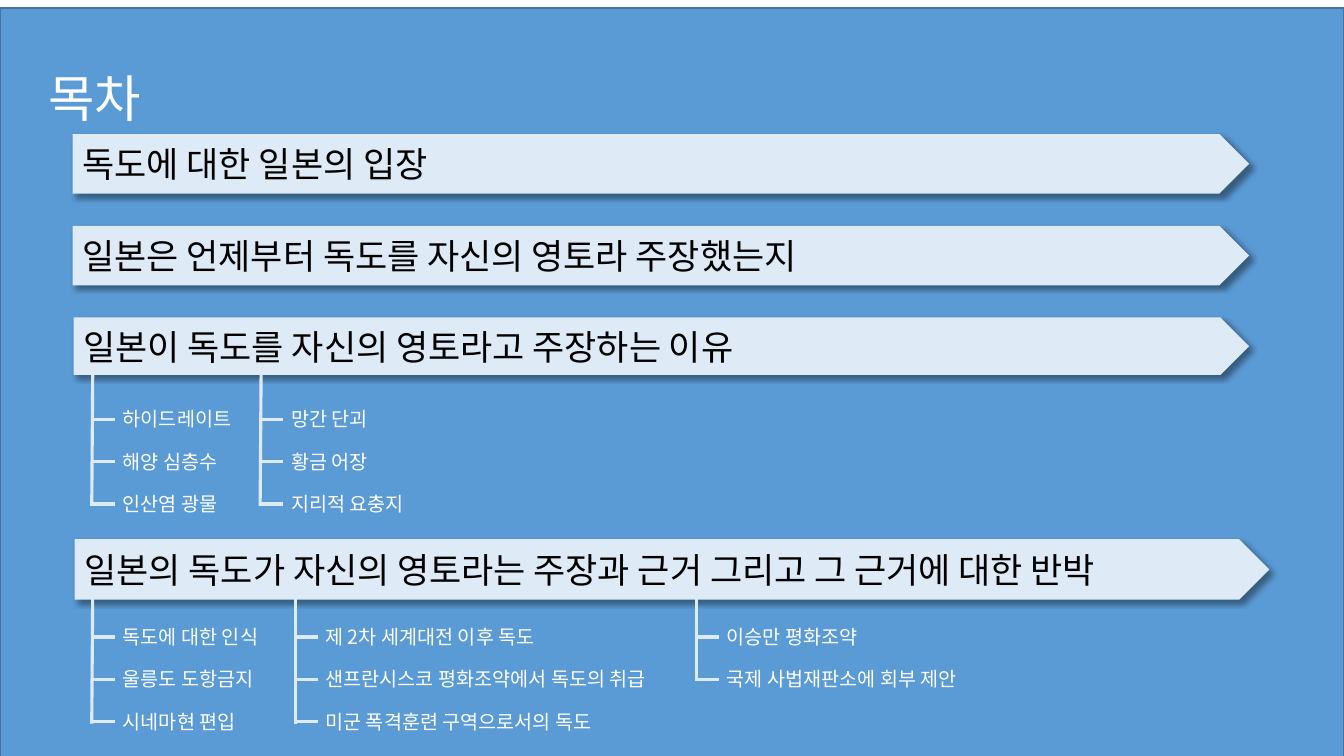
from lxml.etree import SubElement
from pptx import Presentation
from pptx.dml.color import RGBColor
from pptx.enum.shapes import MSO_CONNECTOR, MSO_SHAPE
from pptx.enum.text import MSO_ANCHOR, MSO_AUTO_SIZE, PP_ALIGN
from pptx.oxml import parse_xml
from pptx.oxml.ns import nsdecls, qn
from pptx.util import Inches, Pt

BANNERS = [
    (0.72, 1.33, 11.67, 0.59, "독도에 대한 일본의 입장"),
    (0.72, 2.24, 11.67, 0.59, "일본은 언제부터 독도를 자신의 영토라 주장했는지"),
    (0.73, 3.15, 11.66, 0.57, "일본이 독도를 자신의 영토라고 주장하는 이유"),
    (0.74, 5.35, 11.85, 0.6,
     "일본의 독도가 자신의 영토라는 주장과 근거 그리고 그 근거에 대한 반박"),
]

# Stem left, stem top, lean of the stem, label width, labels
TREES = [
    (0.92, 3.69, 0.01, 1.71, ["하이드레이트", "해양 심층수", "인산염 광물"]),
    (2.59, 3.69, 0.01, 1.71, ["망간 단괴", "황금 어장", "지리적 요충지"]),
    (0.92, 5.85, 0.01, 1.71, ["독도에 대한 인식", "울릉도 도항금지", "시네마현 편입"]),
    (2.93, 5.85, 0, 3.77, ["제 2차 세계대전 이후 독도",
                           "샌프란시스코 평화조약에서 독도의 취급",
                           "미군 폭격훈련 구역으로서의 독도"]),
    (6.91, 5.85, 0, 3.18, ["이승만 평화조약", "국제 사법재판소에 회부 제안"]),
]

SHADOW = f"""<a:effectLst {nsdecls("a")}>
  <a:outerShdw blurRad="{Pt(4)}" dist="{Pt(3)}" dir="2700000" algn="tl" rotWithShape="0">
    <a:srgbClr val="000000"><a:alpha val="40000"/></a:srgbClr>
  </a:outerShdw>
</a:effectLst>"""


def color(value):
    return RGBColor.from_string(value)


class Outline:
    font = "Noto Sans CJK KR"
    blue, edge, pale = "5B9BD5", "43739E", "DEEBF7"
    white, black = "FFFFFF", "000000"
    first_twig, twig_step, twig_length = 0.47, 0.42, 0.22

    def __init__(self, page):
        self.page = page

    def set_text(self, shape, text, size, ink):
        para = shape.text_frame.paragraphs[0]
        para.text = text
        para.alignment = PP_ALIGN.LEFT
        for span in para.runs:
            span.font.size = Pt(size)
            span.font.color.rgb = color(ink)
            span.font.name = self.font
            SubElement(span.font._element, qn("a:ea"), typeface=self.font)

    def shape(self, kind, left, top, width, height, fill):
        shape = self.page.shapes.add_shape(
            kind, Inches(left), Inches(top), Inches(width), Inches(height))
        shape.shadow.inherit = False
        shape.fill.solid()
        shape.fill.fore_color.rgb = color(fill)
        return shape

    def backdrop(self):
        panel = self.shape(MSO_SHAPE.RECTANGLE, 0, 0.08, 13.33, 7.59, self.blue)
        panel.line.color.rgb = color(self.edge)
        panel.line.width = Pt(1)

    def banner(self, left, top, width, height, text):
        banner = self.shape(MSO_SHAPE.PENTAGON, left, top, width, height, self.pale)
        banner.line.fill.background()
        properties = banner._element.spPr
        properties.replace(properties.find(qn("a:effectLst")), parse_xml(SHADOW))
        banner.text_frame.vertical_anchor = MSO_ANCHOR.MIDDLE
        banner.text_frame.word_wrap = True
        self.set_text(banner, text, 25, self.black)

    def label(self, left, top, width, height, text, size):
        box = self.page.shapes.add_textbox(
            Inches(left), Inches(top), Inches(width), Inches(height))
        box.text_frame.word_wrap = True
        box.text_frame.auto_size = MSO_AUTO_SIZE.SHAPE_TO_FIT_TEXT
        self.set_text(box, text, size, self.white)

    def line(self, x1, y1, x2, y2):
        line = self.page.shapes.add_connector(
            MSO_CONNECTOR.STRAIGHT, Inches(x1), Inches(y1), Inches(x2), Inches(y2))
        line.line.color.rgb = color(self.pale)
        line.line.width = Pt(2.25)
        SubElement(line._element.spPr, qn("a:effectLst"))

    def tree(self, left, top, lean, width, labels):
        twigs = [top + self.first_twig + row * self.twig_step
                 for row in range(len(labels))]
        self.line(left, top, left - lean, twigs[-1] + 0.02)
        for y, text in zip(twigs, labels):
            self.line(left, y, left + self.twig_length, y)
            self.label(left + 0.2, y - 0.17, width, 0.34, text, 14)


def main():
    deck = Presentation()
    deck.slide_width, deck.slide_height = Inches(13.33), Inches(7.5)
    outline = Outline(deck.slides.add_slide(deck.slide_layouts[6]))

    # Background and title
    outline.backdrop()
    outline.label(0.38, 0.62, 3.21, 0.71, "목차", 36)

    # Chapters
    for banner in BANNERS:
        outline.banner(*banner)

    # Topics under the chapters
    for tree in TREES:
        outline.tree(*tree)

    deck.save("out.pptx")


if __name__ == "__main__":
    main()
